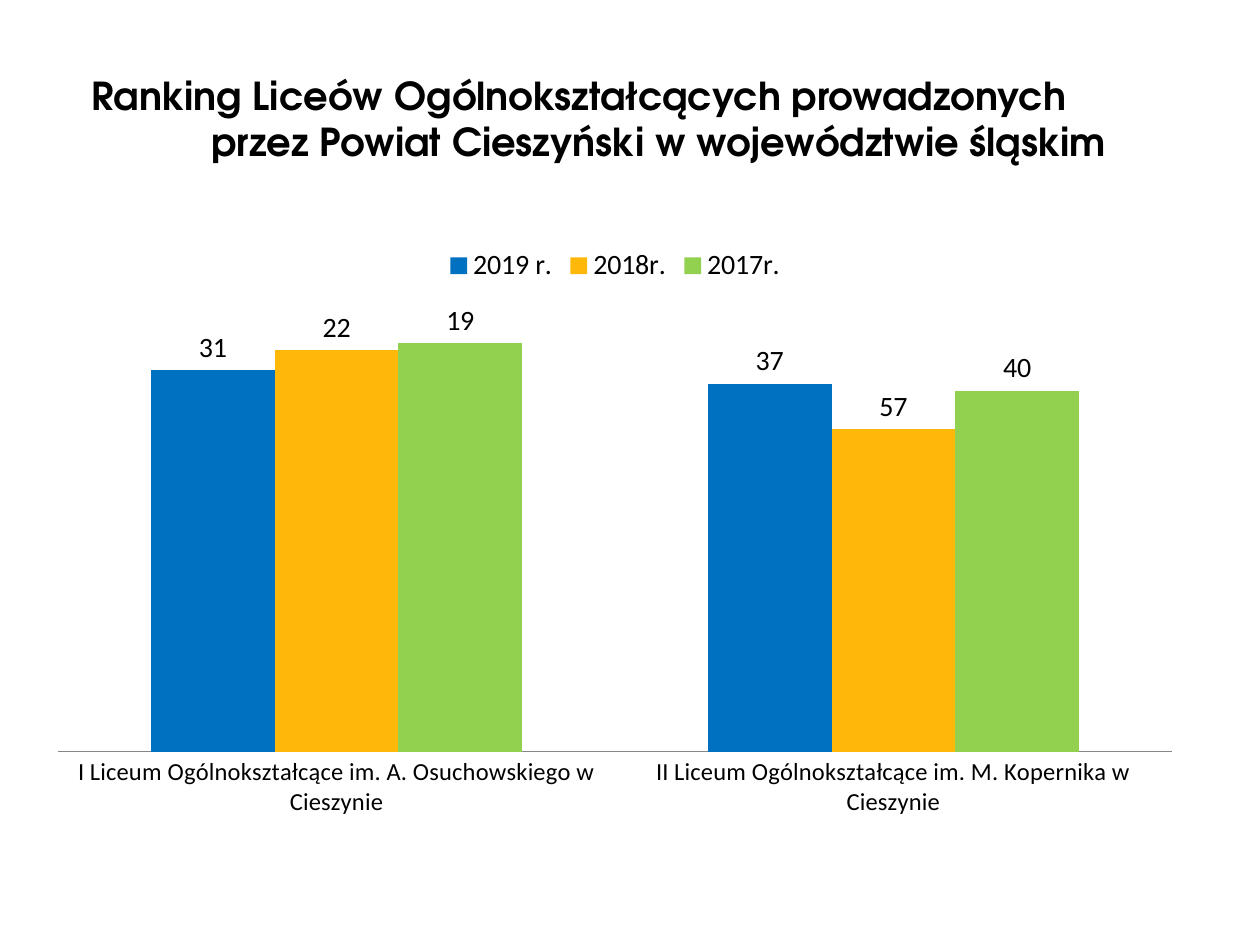
from dataclasses import dataclass

from pptx import Presentation
from pptx.chart.data import CategoryChartData
from pptx.dml.color import RGBColor
from pptx.enum.chart import (XL_AXIS_CROSSES, XL_CHART_TYPE, XL_LABEL_POSITION,
                             XL_LEGEND_POSITION, XL_TICK_MARK)
from pptx.enum.text import MSO_ANCHOR, PP_ALIGN
from pptx.util import Pt

PX = 914400 // 126  # EMU per pixel

BLACK = RGBColor(0x00, 0x00, 0x00)
GREY = RGBColor(0x86, 0x86, 0x86)
BLUE = RGBColor(0x00, 0x70, 0xC0)
AMBER = RGBColor(0xFE, 0xB8, 0x0A)
GREEN = RGBColor(0x92, 0xD0, 0x50)

TITLE_FONT = "TeX Gyre Adventor"
CHART_FONT = "Calibri"


@dataclass
class YearRanking:
    name: str
    places: tuple[int, ...]
    color: RGBColor


SCHOOLS = (
    "I Liceum Ogólnokształcące im. A. Osuchowskiego w Cieszynie",
    "II Liceum Ogólnokształcące im. M. Kopernika w Cieszynie",
)
YEARS = (
    YearRanking("2019 r.", (31, 37), BLUE),
    YearRanking("2018r.", (22, 57), AMBER),
    YearRanking("2017r.", (19, 40), GREEN),
)


def px(*lengths: int) -> list[int]:
    return [n * PX for n in lengths]


def set_font(font, size: int, name: str = CHART_FONT, bold: bool = False) -> None:
    font.size, font.name, font.bold = Pt(size), name, bold
    font.color.rgb = BLACK


def write_text(sp, text: str, *, size: int, name: str, bold: bool = False,
               left: int = 0, hanging: int = 0) -> None:
    """Fill a shape with one paragraph; a vertical tab breaks the line."""
    tf = sp.text_frame
    tf.word_wrap = True
    tf.vertical_anchor = MSO_ANCHOR.TOP
    tf.text = text
    p = tf.paragraphs[0]
    p.alignment = PP_ALIGN.LEFT
    pPr = p._p.get_or_add_pPr()
    pPr.set("marL", str(left * PX))
    pPr.set("indent", str(-hanging * PX))
    for r in p.runs:
        set_font(r.font, size, name, bold)


def add_ranking_chart(s, years: tuple[YearRanking, ...]) -> None:
    data = CategoryChartData()
    data.categories = SCHOOLS
    for year in years:
        data.add_series(year.name, year.places)
    chart = s.shapes.add_chart(XL_CHART_TYPE.COLUMN_CLUSTERED,
                               *px(35, 234, 1160, 595), data).chart
    set_font(chart.font, 10)
    chart.has_title = False
    chart.has_legend = True
    chart.legend.position = XL_LEGEND_POSITION.TOP
    chart.legend.include_in_layout = False
    set_font(chart.legend.font, 16)

    # Columns and value labels
    plot = chart.plots[0]
    plot.gap_width, plot.overlap = 150, 0
    plot.vary_by_categories = False
    for series, year in zip(plot.series, years):
        series.format.fill.solid()
        series.format.fill.fore_color.rgb = year.color
        labels = series.data_labels
        labels.show_value = True
        labels.position = XL_LABEL_POSITION.OUTSIDE_END
        set_font(labels.font, 16)

    # Reversed scale: a better place gives a taller column
    val_axis = chart.value_axis
    val_axis.minimum_scale, val_axis.maximum_scale = 0, 200
    val_axis.reverse_order = True
    val_axis.crosses = XL_AXIS_CROSSES.MAXIMUM
    val_axis.has_major_gridlines = False
    val_axis.visible = False

    cat_axis = chart.category_axis
    cat_axis.major_tick_mark = XL_TICK_MARK.NONE
    cat_axis.format.line.color.rgb = GREY
    cat_axis.format.line.width = Pt(0.75)
    set_font(cat_axis.tick_labels.font, 14)


def main() -> None:
    prs = Presentation()
    prs.slide_width, prs.slide_height = px(1260, 945)
    s = prs.slides.add_slide(prs.slide_layouts[5])

    # Title, second line set in by a hanging indent
    title = s.shapes.title
    title.left, title.top, title.width, title.height = px(74, 66, 1145, 105)
    write_text(title, "Ranking Liceów Ogólnokształcących prowadzonych\v"
                      "przez Powiat Cieszyński w województwie śląskim",
               size=22, name=TITLE_FONT, bold=True, left=125, hanging=120)

    add_ranking_chart(s, YEARS)
    prs.save("out.pptx")


if __name__ == "__main__":
    main()
